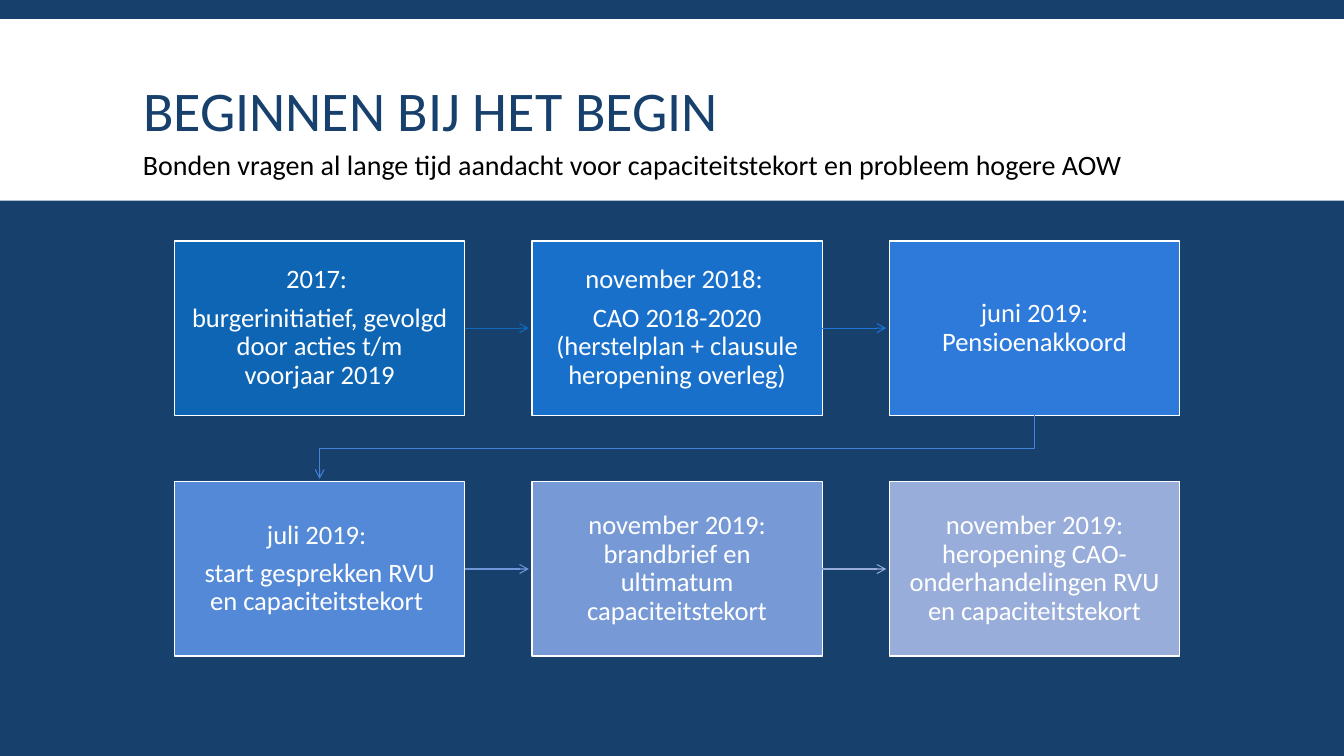
from dataclasses import dataclass

from lxml import etree
from pptx import Presentation
from pptx.dml.color import RGBColor
from pptx.enum import shapes, text
from pptx.oxml.ns import qn
from pptx.util import Inches, Pt

# Content
TITLE = "BEGINNEN BIJ HET BEGIN"
SUBTITLE = "Bonden vragen al lange tijd aandacht voor capaciteitstekort en probleem hogere AOW"
# Paragraphs, box colour, colour of the arrow to the next step
STEPS = [
    (["2017: ", "burgerinitiatief, gevolgd door acties t/m voorjaar 2019"], "0E65B4", "0E6ABD"),
    (["november 2018: ", "CAO 2018-2020 (herstelplan + clausule heropening overleg)"],
     "1970CB", "1D76D7"),
    (["juni 2019: Pensioenakkoord"], "2D7ADA", "4484D9"),
    (["juli 2019: ", "start gesprekken RVU en capaciteitstekort "], "5489D7", "6F97D7"),
    (["november 2019: brandbrief en ultimatum capaciteitstekort"], "779AD6", "97ACD9"),
    (["november 2019: heropening CAO-onderhandelingen RVU en capaciteitstekort"],
     "98ADD9", None),
]


@dataclass(frozen=True)
class Theme:
    font: str = "Calibri"
    navy: str = "17406D"
    white: str = "FFFFFF"
    black: str = "000000"
    title_size: float = 40
    subtitle_size: float = 20
    step_size: float = 19
    border: float = 1
    arrow: float = 0.75


THEME = Theme()

# Step grid, in inches
COLUMNS = 3
LEFT, TOP = 1.73, 2.39
BOX_W, BOX_H = 2.88, 1.73
PITCH_X, PITCH_Y = 3.545, 2.39
ARROW_GAP = 0.03


def rgb(value):
    return RGBColor.from_string(value)


def style(paragraph, size, colour):
    paragraph.font.name = THEME.font
    paragraph.font.size = Pt(size)
    paragraph.font.color.rgb = rgb(colour)


def style_arrow(arrow, colour):
    arrow.line.color.rgb = rgb(colour)
    arrow.line.width = Pt(THEME.arrow)
    etree.SubElement(arrow.line._get_or_add_ln(), qn("a:tailEnd"), type="arrow")


def step_position(index):
    row, column = divmod(index, COLUMNS)
    return LEFT + column * PITCH_X, TOP + row * PITCH_Y


def add_step(slide, index, paragraphs, colour):
    x, y = step_position(index)
    step = slide.shapes.add_shape(shapes.MSO_SHAPE.RECTANGLE, Inches(x), Inches(y),
                                  Inches(BOX_W), Inches(BOX_H))
    step.shadow.inherit = False
    step.fill.solid()
    step.fill.fore_color.rgb = rgb(colour)
    step.line.color.rgb = rgb(THEME.white)
    step.line.width = Pt(THEME.border)
    frame = step.text_frame
    frame.word_wrap = True
    frame.vertical_anchor = text.MSO_ANCHOR.MIDDLE
    frame.margin_left = frame.margin_right = Inches(0.15)
    frame.margin_top = frame.margin_bottom = Inches(0.15)
    for number, words in enumerate(paragraphs):
        paragraph = frame.add_paragraph() if number else frame.paragraphs[0]
        paragraph.text = words
        paragraph.alignment = text.PP_ALIGN.CENTER
        paragraph.line_spacing = 0.9
        paragraph.space_after = Pt(0.35 * THEME.step_size)
        style(paragraph, THEME.step_size, THEME.white)
    return step


def add_row_arrow(slide, index, step, colour):
    x, y = step_position(index)
    middle = Inches(y + BOX_H / 2)
    arrow = slide.shapes.add_connector(
        shapes.MSO_CONNECTOR.STRAIGHT, Inches(x + BOX_W), middle,
        Inches(x + PITCH_X - ARROW_GAP), middle)
    arrow.begin_connect(step, 3)
    style_arrow(arrow, colour)
    etree.SubElement(arrow._element.spPr, qn("a:effectLst"))


def add_return_arrow(slide, index, colour):
    x, y = step_position(index)
    next_x, next_y = step_position(index + 1)
    start_x, end_x = x + BOX_W / 2, next_x + BOX_W / 2
    bottom = y + BOX_H
    turn = (bottom + next_y) / 2
    bends = [(start_x, turn), (end_x, turn), (end_x, next_y - ARROW_GAP)]
    builder = slide.shapes.build_freeform(Inches(start_x), Inches(bottom))
    builder.add_line_segments([(Inches(px), Inches(py)) for px, py in bends], close=False)
    arrow = builder.convert_to_shape()
    arrow.shadow.inherit = False
    arrow.fill.background()
    style_arrow(arrow, colour)


def main():
    prs = Presentation()
    prs.slide_width, prs.slide_height = Inches(13.33), Inches(7.5)
    slide = prs.slides.add_slide(prs.slide_layouts[5])
    slide.background.fill.solid()
    slide.background.fill.fore_color.rgb = rgb(THEME.navy)

    # White header band, placed behind the title
    band = slide.shapes.add_shape(shapes.MSO_SHAPE.RECTANGLE, 0, Inches(0.19),
                                  prs.slide_width, Inches(1.8))
    band.shadow.inherit = False
    band.fill.solid()
    band.fill.fore_color.rgb = rgb(THEME.white)
    band.line.fill.background()
    title = slide.shapes.title
    title._element.addprevious(band._element)

    # Title
    title.left, title.top = Inches(1.32), Inches(0.31)
    title.width, title.height = Inches(10.7), Inches(1.65)
    title.text_frame.text = TITLE
    title.text_frame.auto_size = text.MSO_AUTO_SIZE.NONE
    title.text_frame.vertical_anchor = text.MSO_ANCHOR.MIDDLE
    heading = title.text_frame.paragraphs[0]
    heading.alignment = text.PP_ALIGN.LEFT
    heading.line_spacing = 0.85
    style(heading, THEME.title_size, THEME.navy)

    # Subtitle
    subtitle = slide.shapes.add_textbox(Inches(1.32), Inches(1.41), Inches(10.8), Inches(0.44))
    subtitle.text_frame.word_wrap = True
    subtitle.text_frame.text = SUBTITLE
    style(subtitle.text_frame.paragraphs[0], THEME.subtitle_size, THEME.black)

    # Timeline
    for index, (paragraphs, box_colour, arrow_colour) in enumerate(STEPS):
        step = add_step(slide, index, paragraphs, box_colour)
        if arrow_colour is None:
            continue
        if (index + 1) % COLUMNS:
            add_row_arrow(slide, index, step, arrow_colour)
        else:
            add_return_arrow(slide, index, arrow_colour)

    prs.save("out.pptx")


if __name__ == "__main__":
    main()
